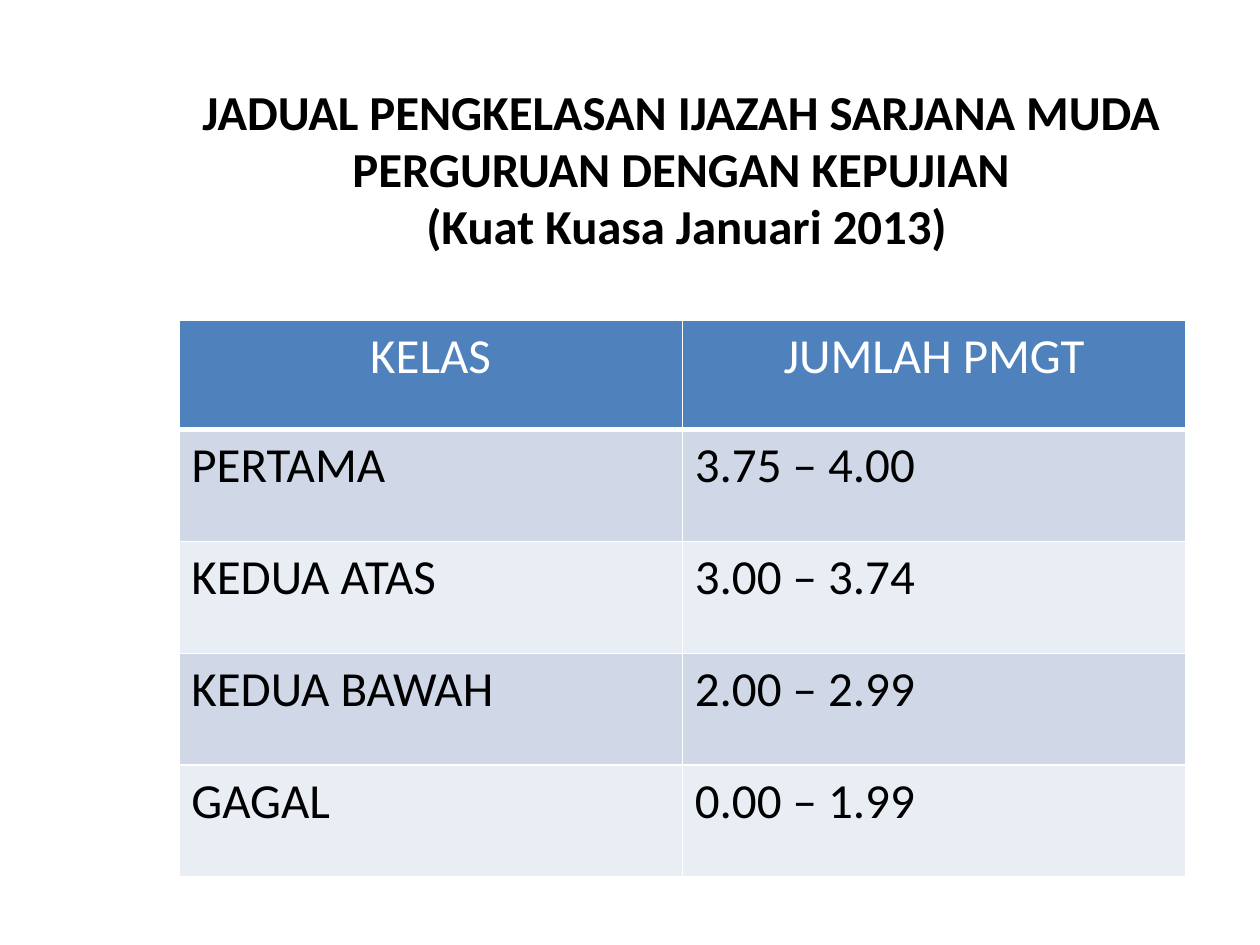
from lxml import etree
from pptx import Presentation
from pptx.dml.color import RGBColor
from pptx.enum import text
from pptx.oxml import ns
from pptx.util import Pt

COLORS = {
    "black": "000000",
    "white": "FFFFFF",
    "header": "4F81BD",
    "odd": "D0D8E8",
    "even": "E9EDF4",
}
TITLE = ("JADUAL PENGKELASAN IJAZAH SARJANA MUDA PERGURUAN DENGAN KEPUJIAN"
         "\v (Kuat Kuasa Januari 2013)")
ROWS = [
    ("KELAS", "JUMLAH PMGT"),
    ("PERTAMA", "3.75 – 4.00"),
    ("KEDUA ATAS", "3.00 – 3.74"),
    ("KEDUA BAWAH", "2.00 – 2.99"),
    ("GAGAL", "0.00 – 1.99"),
]
HEADER_HEIGHT, ROW_HEIGHT, COLUMN_WIDTH = 62.6, 63.9, 287.7


def set_attributes(target, values):
    for name, value in values.items():
        setattr(target, name, value)


def write_text(paragraph, wording, size, color, alignment, bold=False):
    paragraph.text = wording
    paragraph.alignment = alignment
    for run in paragraph.runs:
        set_attributes(run.font, {"name": "Calibri", "size": Pt(size), "bold": bold})
        run.font.color.rgb = RGBColor.from_string(COLORS[color])


def add_title(slide):
    shape = slide.shapes.add_textbox(Pt(0), Pt(44.6), Pt(720), Pt(105.8))
    set_attributes(shape.text_frame, {
        "word_wrap": True,
        "margin_left": Pt(65.5),
        "vertical_anchor": text.MSO_ANCHOR.MIDDLE,
    })
    paragraph = shape.text_frame.paragraphs[0]
    write_text(paragraph, TITLE, 27.9, "black", text.PP_ALIGN.CENTER, bold=True)
    paragraph.line_spacing = 0.97


def set_borders(cell, bottom_width):
    # Border lines must come before the cell fill
    properties = cell._tc.get_or_add_tcPr()
    widths = {"lnL": 1, "lnR": 1, "lnT": 1, "lnB": bottom_width}
    for index, (side, width) in enumerate(widths.items()):
        line = etree.Element(ns.qn(f"a:{side}"), w=str(Pt(width)))
        fill = etree.SubElement(line, ns.qn("a:solidFill"))
        etree.SubElement(fill, ns.qn("a:srgbClr"), val=COLORS["white"])
        properties.insert(index, line)


def format_cell(cell, wording, row_index):
    is_header = row_index == 0
    fill = "header" if is_header else "odd" if row_index % 2 else "even"
    cell.fill.solid()
    cell.fill.fore_color.rgb = RGBColor.from_string(COLORS[fill])
    write_text(cell.text_frame.paragraphs[0], wording, 28,
               "white" if is_header else "black",
               text.PP_ALIGN.CENTER if is_header else text.PP_ALIGN.LEFT)
    set_borders(cell, 3 if is_header else 1)


def add_class_table(slide):
    heights = [HEADER_HEIGHT] + [ROW_HEIGHT] * (len(ROWS) - 1)
    table = slide.shapes.add_table(
        len(ROWS), 2, Pt(102.2), Pt(183), Pt(2 * COLUMN_WIDTH), Pt(sum(heights))).table
    for column in table.columns:
        column.width = Pt(COLUMN_WIDTH)
    for row_index, (wordings, height) in enumerate(zip(ROWS, heights)):
        table.rows[row_index].height = Pt(height)
        for cell, wording in zip(table.rows[row_index].cells, wordings):
            format_cell(cell, wording, row_index)


def main():
    presentation = Presentation()
    set_attributes(presentation, {"slide_width": Pt(720), "slide_height": Pt(540)})
    slide = presentation.slides.add_slide(presentation.slide_layouts[6])
    add_title(slide)
    add_class_table(slide)
    presentation.save("out.pptx")


if __name__ == "__main__":
    main()
